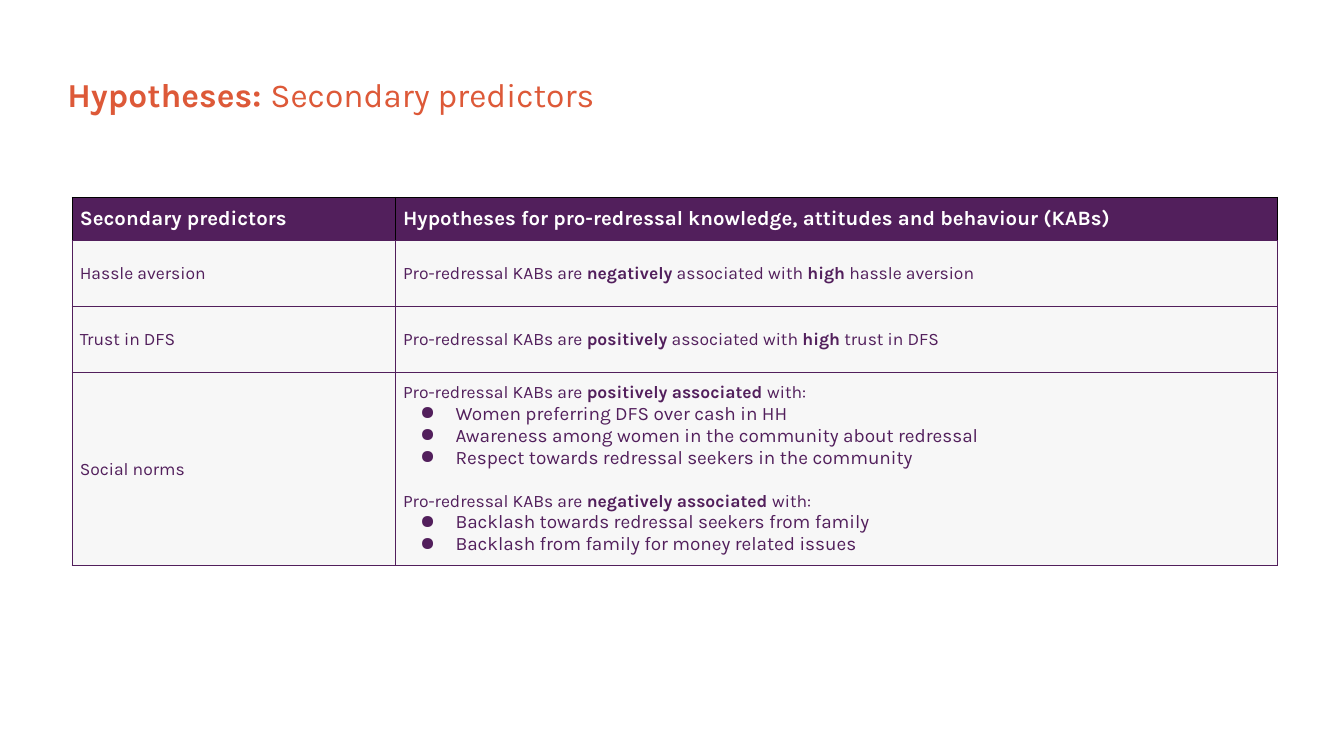
from dataclasses import dataclass

from lxml.etree import SubElement
from pptx import Presentation
from pptx.dml.color import RGBColor as Rgb
from pptx.enum.text import MSO_ANCHOR as Anchor
from pptx.oxml.ns import qn
from pptx.slide import Slide
from pptx.table import _Cell as Cell
from pptx.text.text import TextFrame
from pptx.util import Cm, Pt


@dataclass(frozen=True)
class Theme:
    font: str = "Karla"
    orange: str = "DD5938"
    purple: str = "521F5C"
    black: str = "000000"
    white: str = "FFFFFF"
    grey: str = "F7F7F7"
    title_size: float = 23
    header_size: float = 14
    body_size: float = 12
    bullet_size: float = 13
    group_gap: float = 15


THEME = Theme()


@dataclass(frozen=True)
class Line:
    """A paragraph; every second phrase of its text is bold."""
    phrases: tuple[str, ...]
    size: float = THEME.body_size
    color: str = THEME.purple
    bullet: bool = False
    gap: float = 0


def kabs(*phrases: str, gap: float = 0) -> Line:
    return Line(("Pro-redressal KABs are ", *phrases), gap=gap)


def header(text: str) -> Line:
    return Line(("", text), THEME.header_size, THEME.white)


def bullet(text: str) -> Line:
    return Line((text,), THEME.bullet_size, bullet=True)


TITLE = Line(("", "Hypotheses: ", "Secondary predictors"), THEME.title_size, THEME.orange)
COLUMN_WIDTHS = (7.82, 21.34)
ROW_HEIGHTS = (1.04, 1.6, 1.6, 4.55)
HYPOTHESES: list[tuple[list[Line], list[Line]]] = [
    ([header("Secondary predictors")],
     [header("Hypotheses for pro-redressal knowledge, attitudes and behaviour (KABs)")]),
    ([Line(("Hassle aversion",))],
     [kabs("negatively", " associated with ", "high", " hassle aversion")]),
    ([Line(("Trust in DFS",))],
     [kabs("positively", " associated with ", "high", " trust in DFS")]),
    ([Line(("Social norms",))],
     [kabs("positively associated ", "with:"),
      bullet("Women preferring DFS over cash in HH"),
      bullet("Awareness among women in the community about redressal"),
      bullet("Respect towards redressal seekers in the community"),
      kabs("negatively associated ", "with:", gap=THEME.group_gap),
      bullet("Backlash towards redressal seekers from family"),
      bullet("Backlash from family for money related issues")]),
]


def write(frame: TextFrame, lines: list[Line]) -> None:
    for number, line in enumerate(lines):
        paragraph = frame.add_paragraph() if number else frame.paragraphs[0]
        if line.gap:
            paragraph.space_before = Pt(line.gap)
        if line.bullet:
            props = paragraph._p.get_or_add_pPr()
            props.set("marL", str(Cm(1.27)))
            props.set("indent", str(-Cm(0.86)))
            SubElement(SubElement(props, qn("a:buClr")), qn("a:srgbClr"), val=line.color)
            SubElement(props, qn("a:buChar"), char="●")
        for index, text in enumerate(line.phrases):
            if not text:
                continue
            run = paragraph.add_run()
            run.text = text
            run.font.name = THEME.font
            run.font.size = Pt(line.size)
            run.font.bold = index % 2 == 1
            run.font.color.rgb = Rgb.from_string(line.color)


def style_cell(cell: Cell, fill: str, edge: str) -> None:
    # Borders come before the fill in the cell properties
    props = cell._tc.get_or_add_tcPr()
    for side, color in (("L", edge), ("R", edge), ("T", edge), ("B", THEME.purple)):
        border = SubElement(props, qn(f"a:ln{side}"), w=str(Pt(1)))
        SubElement(SubElement(border, qn("a:solidFill")), qn("a:srgbClr"), val=color)
    cell.fill.solid()
    cell.fill.fore_color.rgb = Rgb.from_string(fill)
    cell.vertical_anchor = Anchor.MIDDLE
    cell.margin_left = cell.margin_right = cell.margin_top = cell.margin_bottom = Cm(0.18)


# Heading above the table
def add_title(slide: Slide) -> None:
    frame = slide.shapes.add_textbox(Cm(1.63), Cm(0.74), Cm(29.26), Cm(3.05)).text_frame
    frame.word_wrap = True
    frame.vertical_anchor = Anchor.MIDDLE
    frame.margin_left = frame.margin_right = frame.margin_top = frame.margin_bottom = 0
    write(frame, [TITLE])


# Table of predictors and their hypotheses
def add_hypotheses(slide: Slide) -> None:
    table = slide.shapes.add_table(
        len(ROW_HEIGHTS), len(COLUMN_WIDTHS), Cm(1.75), Cm(4.78),
        Cm(sum(COLUMN_WIDTHS)), Cm(sum(ROW_HEIGHTS))).table
    table.first_row = table.horz_banding = False
    for column, width in zip(table.columns, COLUMN_WIDTHS):
        column.width = Cm(width)
    for row, height in zip(table.rows, ROW_HEIGHTS):
        row.height = Cm(height)
    for r, entries in enumerate(HYPOTHESES):
        fill, edge = (THEME.grey, THEME.purple) if r else (THEME.purple, THEME.black)
        for c, lines in enumerate(entries):
            cell = table.cell(r, c)
            style_cell(cell, fill, edge)
            write(cell.text_frame, lines)


def main() -> None:
    deck = Presentation()
    deck.slide_width, deck.slide_height = Cm(32.51), Cm(18.29)
    slide = deck.slides.add_slide(deck.slide_layouts[6])
    add_title(slide)
    add_hypotheses(slide)
    deck.save("out.pptx")


if __name__ == "__main__":
    main()
